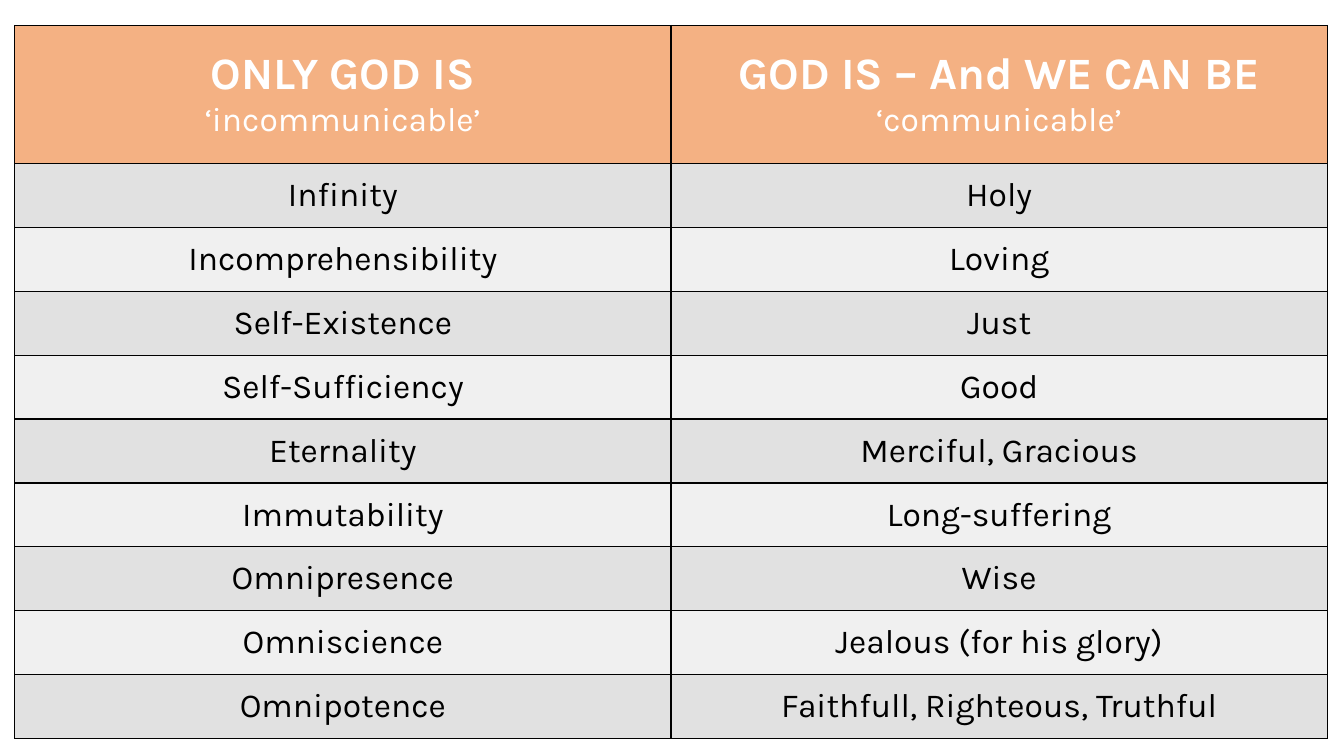
"""Build a slide with a two-column table of the attributes of God."""
from lxml.etree import SubElement
from pptx import Presentation
from pptx.dml.color import RGBColor
from pptx.enum.text import MSO_ANCHOR as Anchor, PP_ALIGN as Align
from pptx.oxml.ns import qn
from pptx.util import Cm, Pt

WHITE = RGBColor(0xFF, 0xFF, 0xFF)
BLACK = RGBColor(0x00, 0x00, 0x00)
ORANGE = RGBColor(0xF4, 0xB1, 0x83)
DARK_GREY = RGBColor(0xE1, 0xE1, 0xE1)
LIGHT_GREY = RGBColor(0xF0, 0xF0, 0xF0)

HEADER_HEIGHT, ROW_HEIGHT, COLUMN_WIDTH = Cm(3.48), Cm(1.61), Cm(16.54)

ATTRIBUTES = [
    ("ONLY GOD IS\n‘incommunicable’", "GOD IS – And WE CAN BE\n‘communicable’"),
    ("Infinity", "Holy"),
    ("Incomprehensibility", "Loving"),
    ("Self-Existence", "Just"),
    ("Self-Sufficiency", "Good"),
    ("Eternality", "Merciful, Gracious"),
    ("Immutability", "Long-suffering"),
    ("Omnipresence", "Wise"),
    ("Omniscience", "Jealous (for his glory)"),
    ("Omnipotence", "Faithfull, Righteous, Truthful"),
]


def add_borders(cell):
    """Draw a thin line on all four sides of a cell."""
    properties = cell._tc.get_or_add_tcPr()
    for side in ("a:lnL", "a:lnR", "a:lnT", "a:lnB"):
        line = SubElement(properties, qn(side), w=str(Pt(1)))
        fill = SubElement(line, qn("a:solidFill"))
        SubElement(fill, qn("a:srgbClr"), val=str(BLACK))


deck = Presentation()
deck.slide_width, deck.slide_height = Cm(33.87), Cm(19.05)
page = deck.slides.add_slide(deck.slide_layouts[6])

row_count = len(ATTRIBUTES)
frame = page.shapes.add_table(
    row_count, 2, Cm(0.37), Cm(0.64),
    2 * COLUMN_WIDTH, HEADER_HEIGHT + (row_count - 1) * ROW_HEIGHT,
)
table = frame.table
for column in table.columns:
    column.width = COLUMN_WIDTH

for row_index, texts in enumerate(ATTRIBUTES):
    is_header = row_index == 0
    table.rows[row_index].height = HEADER_HEIGHT if is_header else ROW_HEIGHT
    stripe = DARK_GREY if row_index % 2 else LIGHT_GREY
    for column_index, text in enumerate(texts):
        cell = table.cell(row_index, column_index)
        add_borders(cell)
        cell.fill.solid()
        cell.fill.fore_color.rgb = ORANGE if is_header else stripe
        cell.vertical_anchor = Anchor.MIDDLE
        cell.margin_left = cell.margin_right = Cm(0.18)
        cell.margin_top = cell.margin_bottom = 0
        cell.text_frame.text = text
        for para_index, para in enumerate(cell.text_frame.paragraphs):
            is_title = is_header and para_index == 0
            para.alignment = Align.CENTER
            for span in para.runs:
                span.font.name = "Karla"
                span.font.size = Pt(32 if is_title else 24)
                span.font.bold = is_title
                span.font.color.rgb = WHITE if is_header else BLACK

deck.save("out.pptx")
